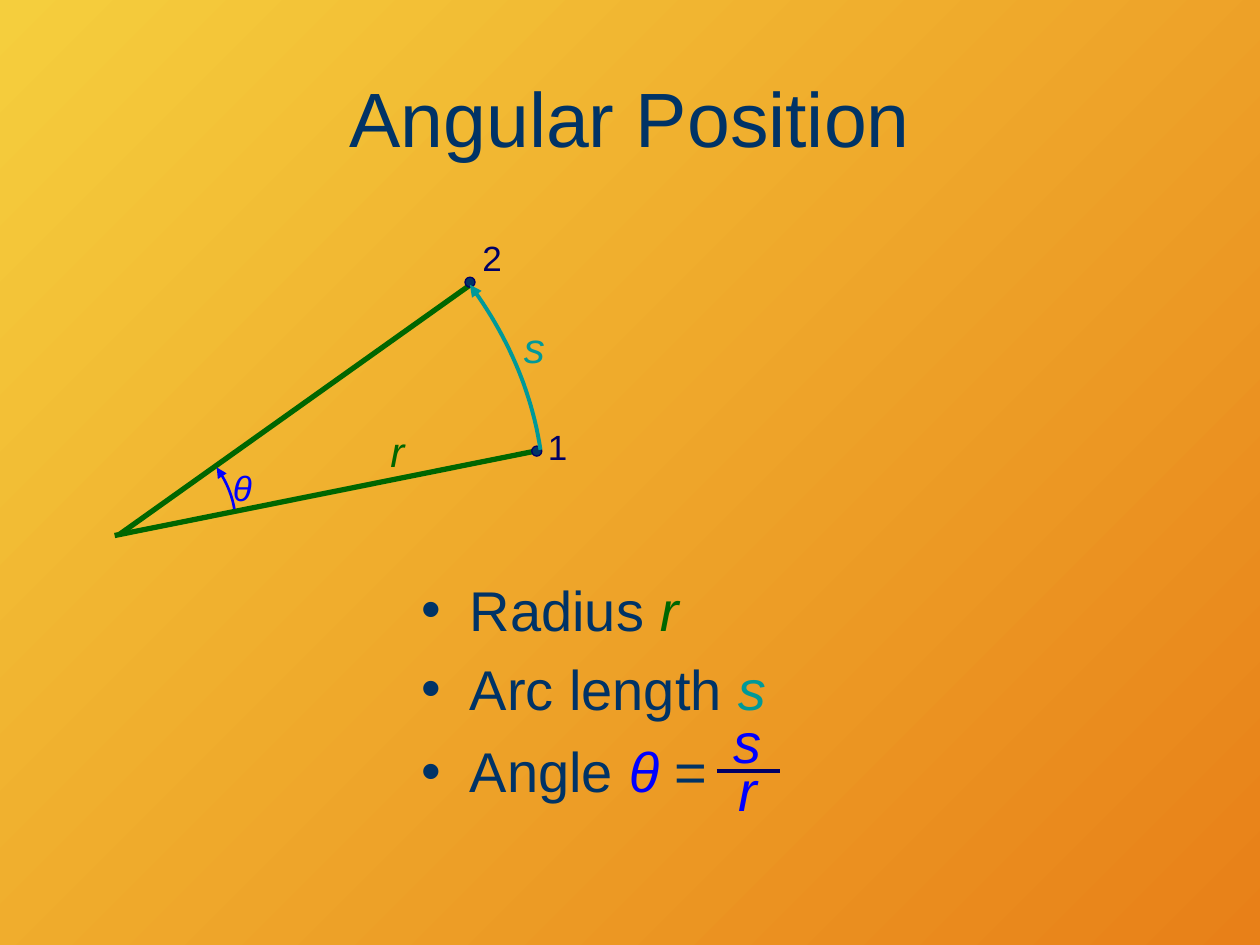
"""Build the Angular Position slide."""
import pptx
import pptx.util
import pptx.dml.color
import pptx.enum.shapes
import pptx.enum.text
import pptx.oxml.ns
import lxml.etree

Pt, Inch = pptx.util.Pt, pptx.util.Inches
Kind = pptx.enum.shapes
Text = pptx.enum.text

HUE = {"sun": "F5CE3D", "rust": "E88018", "ink": "003366", "navy": "000066",
       "green": "006600", "teal": "009999", "blue": "0000FF"}
TITLE = "Angular Position"
LINES = [
    ((3.25, 4.52, 3.42, 1.33), 1, [
        [("Radius ", "ink"), ("r", "green")],
        [("Arc length ", "ink"), ("s", "teal")]]),
    ((3.25, 5.86, 2.58, 0.67), 0.9, [
        [("Angle ", "ink"), ("θ", "blue"), (" =", "ink")]]),
]
LABELS = [
    ("s", (4.06, 2.5, 0.37, 0.5), 24, "teal"),
    ("r", (3, 3.33, 0.31, 0.5), 24, "green"),
    ("1", (4.25, 3.33, 0.36, 0.43), 20, "navy"),
    ("2", (3.73, 1.83, 0.36, 0.43), 20, "navy"),
    ("θ", (1.75, 3.65, 0.35, 0.43), 20, "blue"),
    ("s", (5.72, 5.57, 0.42, 0.63), 32, "blue"),
    ("r", (5.76, 5.95, 0.35, 0.63), 32, "blue"),
]
RULES = [
    ((0.95, 4.24), (3.72, 2.27), "green", 3),
    ((0.91, 4.25), (4.25, 3.58), "green", 3),
    ((5.69, 6.12), (6.19, 6.12), "navy", 2.25),
]
DOTS = [(4.26, 3.58), (3.73, 2.24)]
DOT = 0.08
ARCS = [
    ([(1.86, 4.04), (1.84, 3.92), (1.79, 3.81), (1.72, 3.71)], "blue", 1.5),
    ([(4.29, 3.57), (4.22, 3.1), (4.02, 2.65), (3.73, 2.26)], "teal", 2.25),
]
STEPS = 24


def tint(name):
    return pptx.dml.color.RGBColor.from_string(HUE[name])


def child(node, tag, **attrs):
    return lxml.etree.SubElement(node, pptx.oxml.ns.qn(tag), attrs)


def style(run, size, hue):
    font = run.font
    font.name, font.size = "Arial", Pt(size)
    font.color.rgb = tint(hue)
    font.italic = run.text in ("r", "s", "θ")


def stroke(shape, hue, width):
    shape.line.color.rgb = tint(hue)
    shape.line.width = Pt(width)


def add_box(slide, place):
    return slide.shapes.add_textbox(*map(Inch, place)).text_frame


def add_lines(slide, place, space, rows):
    frame = add_box(slide, place)
    frame.word_wrap = True
    for i, row in enumerate(rows):
        para = frame.add_paragraph() if i else frame.paragraphs[0]
        para.line_spacing, para.space_before = space, Pt(6.4)
        for text, hue in row:
            run = para.add_run()
            run.text = text
            style(run, 32, hue)
        props = para._p.get_or_add_pPr()
        props.set("marL", str(Inch(0.38)))
        props.set("indent", str(-Inch(0.38)))
        child(props, "a:buFont", typeface="Arial")
        child(props, "a:buChar", char="•")


def add_label(slide, text, place, size, hue):
    frame = add_box(slide, place)
    frame.word_wrap = False
    frame.auto_size = Text.MSO_AUTO_SIZE.SHAPE_TO_FIT_TEXT
    frame.text = text
    style(frame.paragraphs[0].runs[0], size, hue)


def add_rule(slide, start, end, hue, width):
    rule = slide.shapes.add_connector(
        Kind.MSO_CONNECTOR.STRAIGHT, *map(Inch, start + end))
    stroke(rule, hue, width)
    child(rule._element.spPr, "a:effectLst")


def add_dot(slide, x, y):
    dot = slide.shapes.add_shape(
        Kind.MSO_SHAPE.OVAL, Inch(x - DOT / 2), Inch(y - DOT / 2), Inch(DOT), Inch(DOT))
    dot.shadow.inherit = False
    dot.fill.solid()
    dot.fill.fore_color.rgb = tint("ink")
    stroke(dot, "navy", 0.75)


def curve(knots, t):
    mix = ((1 - t) ** 3, 3 * t * (1 - t) ** 2, 3 * t * t * (1 - t), t ** 3)
    return tuple(Inch(sum(m * v for m, v in zip(mix, axis))) for axis in zip(*knots))


def add_arc(slide, knots, hue, width):
    dots = [curve(knots, i / STEPS) for i in range(STEPS + 1)]
    pen = slide.shapes.build_freeform(*dots[0])
    pen.add_line_segments(dots[1:], close=False)
    arc = pen.convert_to_shape()
    arc.shadow.inherit = False
    arc.fill.background()
    stroke(arc, hue, width)
    child(arc.line._get_or_add_ln(), "a:tailEnd", type="triangle")


def main():
    deck = pptx.Presentation()
    deck.slide_width, deck.slide_height = Inch(10), Inch(7.5)
    slide = deck.slides.add_slide(deck.slide_layouts[5])
    fill = slide.background.fill
    fill.gradient()
    fill.gradient_angle = 315
    for stop, hue, at in zip(fill.gradient_stops, ("sun", "rust"), (0, 1)):
        stop.color.rgb, stop.position = tint(hue), at
    title = slide.shapes.title
    title.left, title.top, title.width, title.height = map(Inch, (0.5, 0.3, 9, 1.25))
    title.text_frame.text = TITLE
    title.text_frame.vertical_anchor = Text.MSO_ANCHOR.MIDDLE
    para = title.text_frame.paragraphs[0]
    para.alignment = Text.PP_ALIGN.CENTER
    style(para.runs[0], 44, "ink")
    for draw, items in ((add_lines, LINES), (add_rule, RULES), (add_dot, DOTS),
                        (add_label, LABELS), (add_arc, ARCS)):
        for item in items:
            draw(slide, *item)
    deck.save("out.pptx")


if __name__ == "__main__":
    main()
